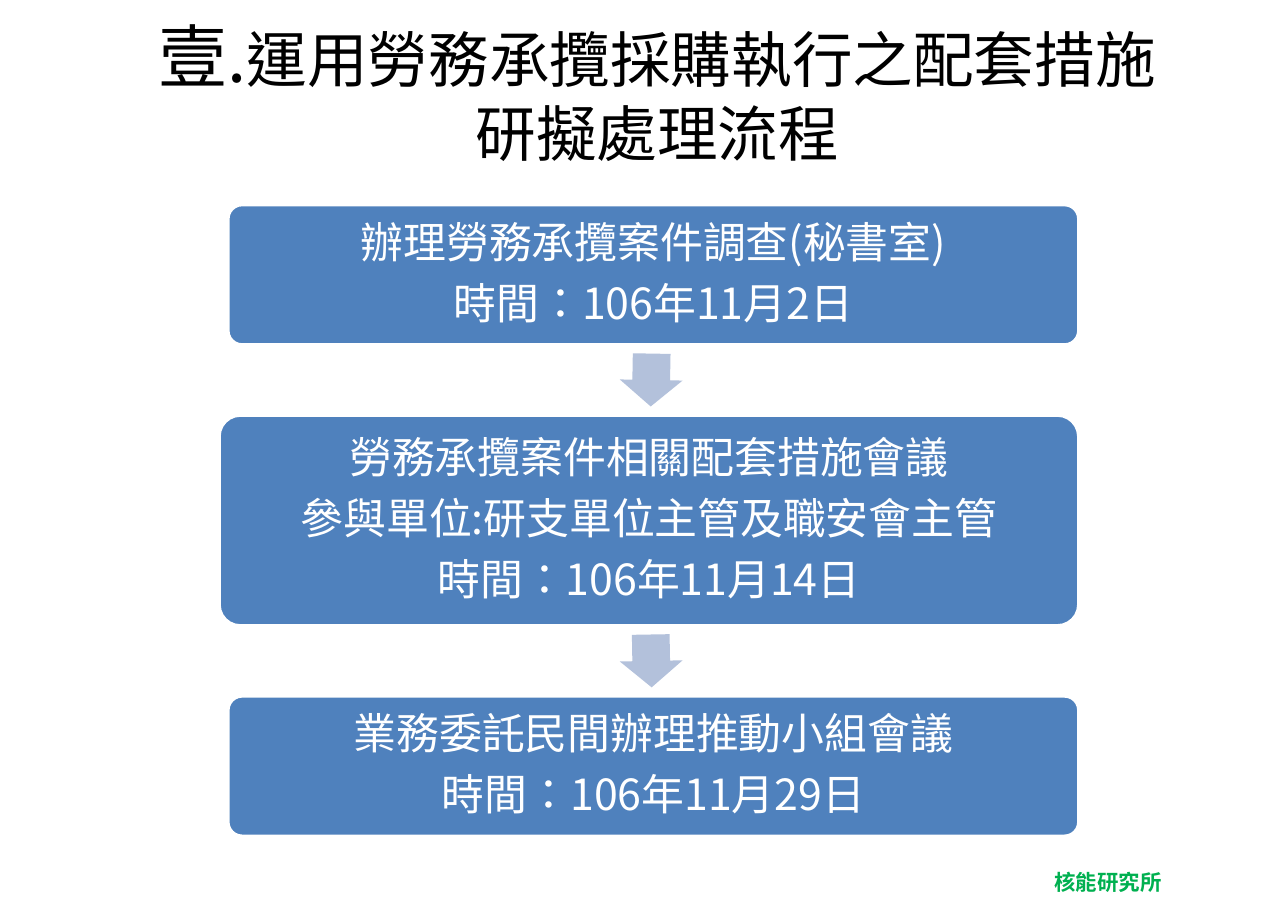
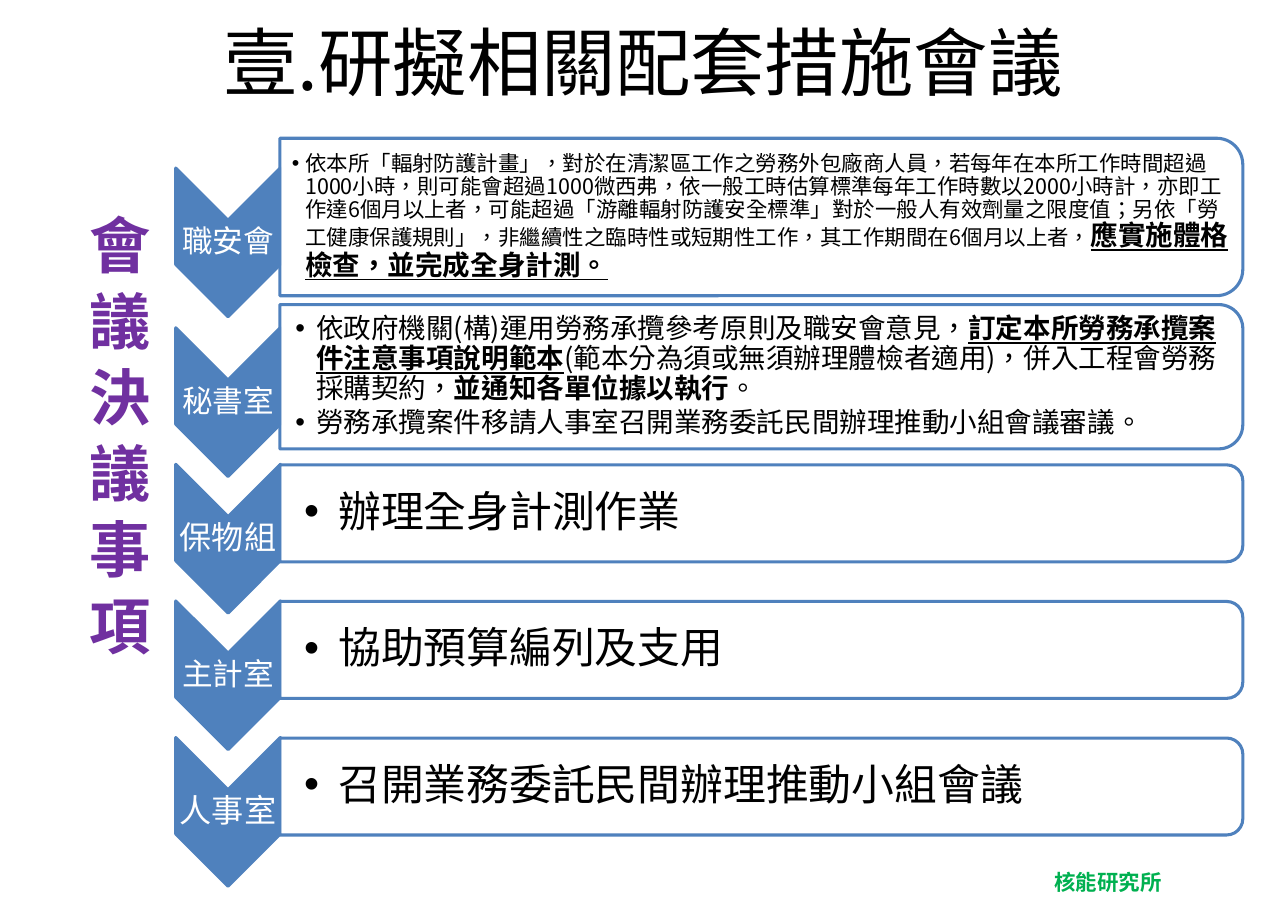
"""Build two slides on the labour service contracting measures: a flow and its resolutions."""
from dataclasses import dataclass

from lxml import etree
from pptx import Presentation
from pptx.dml.color import RGBColor
from pptx.enum.shapes import MSO_SHAPE
from pptx.enum.text import MSO_ANCHOR, MSO_AUTO_SIZE, PP_ALIGN
from pptx.oxml.ns import qn
from pptx.util import Inches, Pt

ROUND_RECT = MSO_SHAPE.ROUNDED_RECTANGLE
RIGHT_ARROW = MSO_SHAPE.RIGHT_ARROW
CHEVRON = MSO_SHAPE.CHEVRON
TAB_RECT = MSO_SHAPE.ROUND_2_SAME_RECTANGLE
MIDDLE = MSO_ANCHOR.MIDDLE
TOP = MSO_ANCHOR.TOP
CENTER = PP_ALIGN.CENTER
LEFT = PP_ALIGN.LEFT
NO_FIT = MSO_AUTO_SIZE.NONE

FONT = "Noto Sans CJK SC"
LANG = "zh-TW"
COLORS = {"blue": "4F81BD", "arrow": "B3C1DB", "white": "FFFFFF",
          "black": "000000", "green": "00B050", "purple": "7030A0"}

TIGHT = 0.9
STEP_GAP = 0.64
BAR_LEFT, BAR_W = 2.54, 8.74
CHEVRON_W, CHEVRON_H, CHEVRON_DROP = 0.95, 1.35, 0.23
CHEVRON_MID = 2.07


@dataclass(frozen=True)
class Span:
    text: str
    size: float
    bold: bool = False
    underline: bool = False


@dataclass(frozen=True)
class Step:
    height: float
    left: float
    lines: tuple[str, ...]


@dataclass(frozen=True)
class Row:
    unit: str
    unit_size: int
    center: float
    height: float
    indent: float
    inset: float
    items: tuple[tuple[Span, ...], ...]


STEPS = (
    Step(1.27, 2.07, ("辦理勞務承攬案件調查(秘書室)", "時間：106年11月2日")),
    Step(1.91, 1.99, ("勞務承攬案件相關配套措施會議",
                      "參與單位:研支單位主管及職安會主管", "時間：106年11月14日")),
    Step(1.27, 2.07, ("業務委託民間辦理推動小組會議", "時間：106年11月29日")),
)
ARROW_ANGLES = (91, 89)

SAFETY = ((
    Span("依本所「輻射防護計畫」，對於在清潔區工作之勞務外包廠商人員，"
         "若每年在本所工作時間超過1000小時，則可能會超過1000微西弗，"
         "依一般工時估算標準每年工作時數以2000小時計，亦即工作達6個月以上者，"
         "可能超過「游離輻射防護安全標準」對於一般人有效劑量之限度值；"
         "另依「勞工健康保護規則」，非繼續性之臨時性或短期性工作，"
         "其工作期間在6個月以上者，", 14),
    Span("應實施體格檢查，並完成全身計測。", 18, True, True),
),)
SECRETARIAT = (
    (
        Span("依政府機關(構)運用勞務承攬參考原則及職安會意見，", 18),
        Span("訂定本所勞務承攬案件注意事項說明範本", 18, True, True),
        Span("(範本分為須或無須辦理體檢者適用)，併入工程會勞務採購契約，", 18),
        Span("並通知各單位據以執行", 18, True),
        Span("。", 18),
    ),
    (Span("勞務承攬案件移請人事室召開業務委託民間辦理推動小組會議審議。", 18),),
)
SHORT_ROWS = (("保物組", 21, "辦理全身計測作業"),
              ("主計室", 20, "協助預算編列及支用"),
              ("人事室", 21, "召開業務委託民間辦理推動小組會議"))
ROWS = (
    Row("職安會", 20, 1.97, 1.43, 0.12, 0.11, SAFETY),
    Row("秘書室", 20, 3.42, 1.31, 0.19, 0.14, SECRETARIAT),
    *(Row(unit, size, 4.66 + 1.24 * i, 0.88, 0.31, 0.22, ((Span(text, 28),),))
      for i, (unit, size, text) in enumerate(SHORT_ROWS)),
)


def rgb(name: str) -> RGBColor:
    return RGBColor.from_string(COLORS[name])


def set_frame(tf, margins: tuple[float, ...], anchor=MIDDLE, wrap: bool = True) -> None:
    tf.word_wrap = wrap
    tf.auto_size = NO_FIT
    tf.vertical_anchor = anchor
    (tf.margin_left, tf.margin_top,
     tf.margin_right, tf.margin_bottom) = map(Inches, margins)


def add_spans(p, spans: tuple[Span, ...], color: str) -> None:
    for span in spans:
        if span.text == "\v":
            p.add_line_break()
            continue
        r = p.add_run()
        r.text = span.text
        font = r.font
        font.name, font.size = FONT, Pt(span.size)
        font.bold, font.underline = span.bold, span.underline
        font.color.rgb = rgb(color)
        rPr = r._r.get_or_add_rPr()
        rPr.set("lang", LANG)
        rPr.find(qn("a:latin")).addnext(etree.Element(qn("a:ea"), typeface=FONT))


def fill_paragraphs(tf, items: tuple[tuple[Span, ...], ...], color: str, align=CENTER,
                    spacing: float = 1.0, after: float = 0, indent: float = 0) -> None:
    for i, spans in enumerate(items):
        p = tf.add_paragraph() if i else tf.paragraphs[0]
        p.alignment, p.line_spacing, p.space_after = align, spacing, Pt(after)
        if indent:
            pPr = p._p.get_or_add_pPr()
            pPr.set("marL", str(Inches(indent)))
            pPr.set("indent", str(-Inches(indent)))
            etree.SubElement(pPr, qn("a:buFont"), typeface="Arial")
            etree.SubElement(pPr, qn("a:buChar"), char="•")
        add_spans(p, spans, color)


def add_box(slide, left: float, top: float, width: float, height: float):
    return slide.shapes.add_textbox(*map(Inches, (left, top, width, height)))


def add_figure(slide, kind, left: float, top: float, width: float, height: float,
               fill: str, line: str = "", angle: float = 0):
    sp = slide.shapes.add_shape(kind, *map(Inches, (left, top, width, height)))
    sp.shadow.inherit = False
    sp.rotation = angle
    sp.fill.solid()
    sp.fill.fore_color.rgb = rgb(fill)
    if line:
        sp.line.color.rgb = rgb(line)
        sp.line.width = Pt(2)
    else:
        sp.line.fill.background()
    return sp


def add_turned(slide, kind, center_x: float, center_y: float, width: float,
               height: float, fill: str, line: str = "", angle: float = 90):
    return add_figure(slide, kind, center_x - height / 2, center_y - width / 2,
                      height, width, fill, line, angle)


def add_slide(prs, title: tuple[Span, ...], area: tuple[float, ...]):
    slide = prs.slides.add_slide(prs.slide_layouts[5])
    sp = slide.shapes.title
    sp.left, sp.top, sp.width, sp.height = map(Inches, area)
    set_frame(sp.text_frame, (0.11, 0.06, 0.11, 0.06))
    fill_paragraphs(sp.text_frame, (title,), "black")
    footer = add_box(slide, 9.47, 7.84, 1.18, 0.34).text_frame
    set_frame(footer, (0.1, 0.05, 0.1, 0.05), TOP, wrap=False)
    fill_paragraphs(footer, ((Span("核能研究所", 14, True),),), "green", LEFT)
    return slide


def add_flow(slide) -> None:
    top, right = 1.86, 9.79
    for i, step in enumerate(STEPS):
        sp = add_figure(slide, ROUND_RECT, step.left, top, right - step.left,
                        step.height, "blue", "white")
        sp.adjustments[0] = 0.1
        set_frame(sp.text_frame, (0.12,) * 4)
        items = tuple((Span(line, 28),) for line in step.lines)
        fill_paragraphs(sp.text_frame, items, "white", spacing=TIGHT, after=9.8)
        top += step.height
        if i < len(ARROW_ANGLES):
            arrow = add_turned(slide, RIGHT_ARROW, 5.91, top + STEP_GAP / 2, 0.57, 0.48,
                               "arrow", angle=ARROW_ANGLES[i])
            arrow.adjustments[0] = 0.6
        top += STEP_GAP


def add_row(slide, row: Row) -> None:
    mid = row.center + CHEVRON_DROP
    add_turned(slide, CHEVRON, CHEVRON_MID, mid, CHEVRON_W, CHEVRON_H, "blue", "blue")
    label = add_box(slide, CHEVRON_MID - CHEVRON_W / 2, mid - 0.2, CHEVRON_W, 0.41)
    set_frame(label.text_frame, (0.01,) * 4)
    fill_paragraphs(label.text_frame, ((Span(row.unit, row.unit_size),),), "white",
                    spacing=TIGHT)
    bar = add_turned(slide, TAB_RECT, BAR_LEFT + BAR_W / 2, row.center, BAR_W,
                     row.height, "white", "blue")
    fill = bar._element.spPr.find(qn("a:solidFill"))
    etree.SubElement(fill[0], qn("a:alpha"), val="90000")
    height = 0.9 * row.height
    body = add_box(slide, BAR_LEFT, row.center - height / 2, 8.68, height).text_frame
    set_frame(body, (row.inset, 0.01, 0.01, 0.01))
    fill_paragraphs(body, row.items, "black", LEFT, TIGHT, 2.7, row.indent)


def add_side_heading(slide) -> None:
    tf = add_box(slide, 0.57, 1.85, 0.88, 5.51).text_frame
    set_frame(tf, (0.1, 0.05, 0.1, 0.05), TOP)
    tf._txBody.bodyPr.set("vert", "eaVert")
    fill_paragraphs(tf, ((Span("會 議 決 議 事 項", 40, True),),), "purple", LEFT)


def main() -> None:
    prs = Presentation()
    prs.slide_width, prs.slide_height = Inches(11.69), Inches(8.27)

    flow_title = (Span("壹.", 45), Span("運用勞務承攬採購執行之配套措施", 39.6),
                  Span("\v", 39.6), Span("研擬處理流程", 39.6))
    add_flow(add_slide(prs, flow_title, (0.57, 0.2, 10.79, 1.26)))

    slide = add_slide(prs, (Span("壹.研擬相關配套措施會議", 48.6),),
                      (0.57, 0.12, 10.53, 0.87))
    for row in ROWS:
        add_row(slide, row)
    add_side_heading(slide)

    prs.save("out.pptx")


if __name__ == "__main__":
    main()
